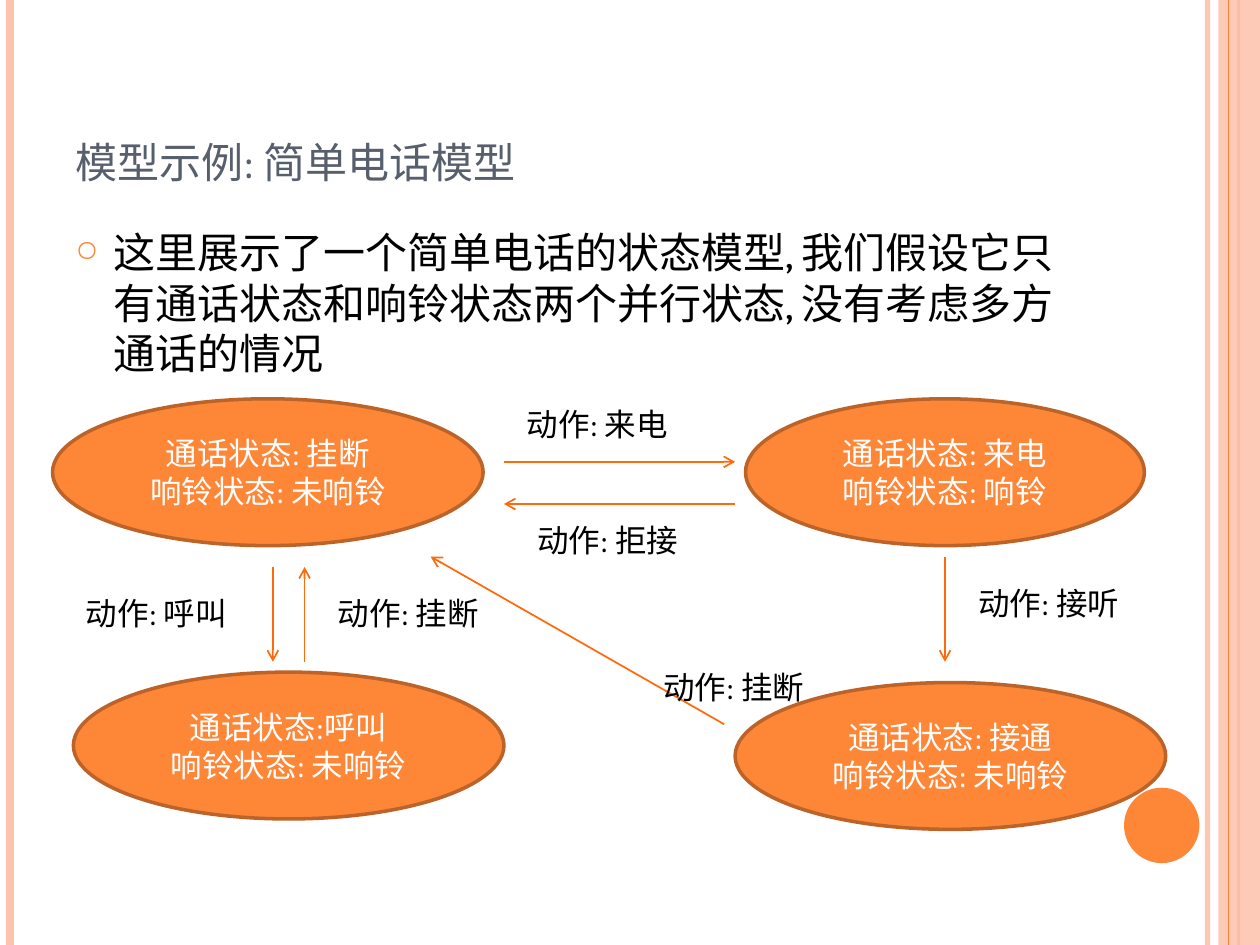
"""Build a slide showing the state model of a simple telephone."""
from lxml import etree
from pptx import Presentation
from pptx.dml.color import RGBColor
from pptx.enum.shapes import MSO_CONNECTOR, MSO_SHAPE
from pptx.enum.text import MSO_ANCHOR, PP_ALIGN
from pptx.oxml.ns import qn
from pptx.util import Cm, Pt

STRAIGHT = MSO_CONNECTOR.STRAIGHT
OVAL, RECTANGLE = MSO_SHAPE.OVAL, MSO_SHAPE.RECTANGLE
TOP, MIDDLE, BOTTOM = MSO_ANCHOR.TOP, MSO_ANCHOR.MIDDLE, MSO_ANCHOR.BOTTOM
LEFT, CENTER = PP_ALIGN.LEFT, PP_ALIGN.CENTER

ORANGE = RGBColor(0xFE, 0x86, 0x37)
DARK_ORANGE = RGBColor(0xBC, 0x63, 0x29)
ARROW_ORANGE = RGBColor(0xFF, 0x6B, 0x0A)
PEACH = RGBColor(0xFE, 0xC3, 0xAE)
SLATE = RGBColor(0x57, 0x5F, 0x6D)
BLACK = RGBColor(0, 0, 0)
WHITE = RGBColor(0xFF, 0xFF, 0xFF)

FONT = "Cambria"
SLIDE_WIDTH, SLIDE_HEIGHT = 25.4, 19.05

TITLE = "模型示例: 简单电话模型"
INTRO = ("这里展示了一个简单电话的状态模型, 我们假设它只有通话状态和响铃状态"
         "两个并行状态, 没有考虑多方通话的情况")

STRIPES_BEHIND = [(24.34, PEACH, 3, 93), (0.21, PEACH, 4.5, 100),
                  (24.97, ORANGE, 1.5, 100)]
STRIPE_IN_FRONT = (24.77, ORANGE, 0.75, 100)
BAND = (24.56, 0, 0.84, SLIDE_HEIGHT)
DOT = (22.66, 15.88, 1.52, 1.52)

STATE_HEIGHT = 2.96
STATES = [
    (1.06, 8.04, 8.68, ["通话状态: 挂断", "响铃状态: 未响铃"]),
    (15.03, 8.04, 8.04, ["通话状态: 来电", "响铃状态: 响铃"]),
    (14.82, 13.76, 8.68, ["通话状态: 接通", "响铃状态: 未响铃"]),
    (1.48, 13.55, 8.68, ["通话状态:呼叫", "响铃状态: 未响铃"]),
]

ACTION_HEIGHT = 1.02
ACTIONS = [
    ("动作: 来电", (10.37, 8.04, 3.81), (10.16, 9.31, 14.82, 9.31)),
    ("动作: 接听", (19.47, 11.64, 3.81), (19.05, 11.22, 19.05, 13.34)),
    ("动作: 拒接", (10.58, 10.37, 3.81), (14.82, 10.16, 10.16, 10.16)),
    ("动作: 呼叫", (1.48, 11.85, 3.6), (5.5, 11.43, 5.5, 13.34)),
    ("动作: 挂断", (6.56, 11.85, 3.6), (6.14, 13.34, 6.14, 11.43)),
    ("动作: 挂断", (13.12, 13.34, 3.6), (14.6, 14.6, 8.68, 11.22)),
]


def lengths(values):
    return [Cm(value) for value in values]


def set_alpha(properties, percent):
    color = properties.find(".//" + qn("a:srgbClr"))
    etree.SubElement(color, qn("a:alpha"), val=str(percent * 1000))


def add_line(slide, ends, color, width):
    line = slide.shapes.add_connector(STRAIGHT, *lengths(ends))
    line.line.color.rgb = color
    line.line.width = Pt(width)
    etree.SubElement(line._element.spPr, qn("a:effectLst"))
    return line


def add_stripe(slide, x, color, width, alpha):
    stripe = add_line(slide, (x, 0, x, SLIDE_HEIGHT), color, width)
    if alpha < 100:
        set_alpha(stripe._element.spPr, alpha)


def add_arrow(slide, ends):
    arrow = add_line(slide, ends, ARROW_ORANGE, 1)
    etree.SubElement(arrow.line._get_or_add_ln(), qn("a:tailEnd"), type="arrow")


def add_solid(slide, kind, box, color):
    solid = slide.shapes.add_shape(kind, *lengths(box))
    solid.shadow.inherit = False
    solid.fill.solid()
    solid.fill.fore_color.rgb = color
    solid.line.fill.background()
    return solid


def write(frame, lines, size, color, anchor=TOP, align=LEFT):
    frame.word_wrap = True
    frame.vertical_anchor = anchor
    for index, line in enumerate(lines):
        paragraph = frame.add_paragraph() if index else frame.paragraphs[0]
        paragraph.alignment = align
        run = paragraph.add_run()
        run.text = line
        run.font.name = FONT
        run.font.size = Pt(size)
        run.font.color.rgb = color


def add_text(slide, box, text, size, color, anchor=TOP):
    frame = slide.shapes.add_textbox(*lengths(box)).text_frame
    write(frame, [text], size, color, anchor)
    return frame.paragraphs[0]


def add_bullet(paragraph):
    paragraph.space_before = Pt(6)
    properties = paragraph._p.get_or_add_pPr()
    properties.set("marL", str(Cm(0.76)))
    properties.set("indent", str(-Cm(0.76)))
    bullet_color = etree.SubElement(properties, qn("a:buClr"))
    etree.SubElement(bullet_color, qn("a:srgbClr"), val=str(ORANGE))
    etree.SubElement(properties, qn("a:buSzPct"), val="70000")
    etree.SubElement(properties, qn("a:buChar"), char="○")


def main():
    deck = Presentation()
    deck.slide_width, deck.slide_height = lengths((SLIDE_WIDTH, SLIDE_HEIGHT))
    slide = deck.slides.add_slide(deck.slide_layouts[6])

    for stripe in STRIPES_BEHIND:
        add_stripe(slide, *stripe)
    band = add_solid(slide, RECTANGLE, BAND, PEACH)
    set_alpha(band._element.spPr, 87)
    add_stripe(slide, *STRIPE_IN_FRONT)
    add_solid(slide, OVAL, DOT, ORANGE)

    title = add_text(slide, (1.27, 0.76, 20.75, 3.18), TITLE, 30, SLATE, BOTTOM)
    title.runs[0].font._element.set("cap", "small")
    add_bullet(add_text(slide, (1.27, 4.45, 20.75, 13.54), INTRO, 24, BLACK))

    for left, top, width, lines in STATES:
        state = add_solid(slide, OVAL, (left, top, width, STATE_HEIGHT), ORANGE)
        state.line.color.rgb = DARK_ORANGE
        state.line.width = Pt(2)
        write(state.text_frame, lines, 18, WHITE, MIDDLE, CENTER)

    for action, place, ends in ACTIONS:
        add_arrow(slide, ends)
        add_text(slide, (*place, ACTION_HEIGHT), action, 18, BLACK)

    deck.save("out.pptx")


if __name__ == "__main__":
    main()
